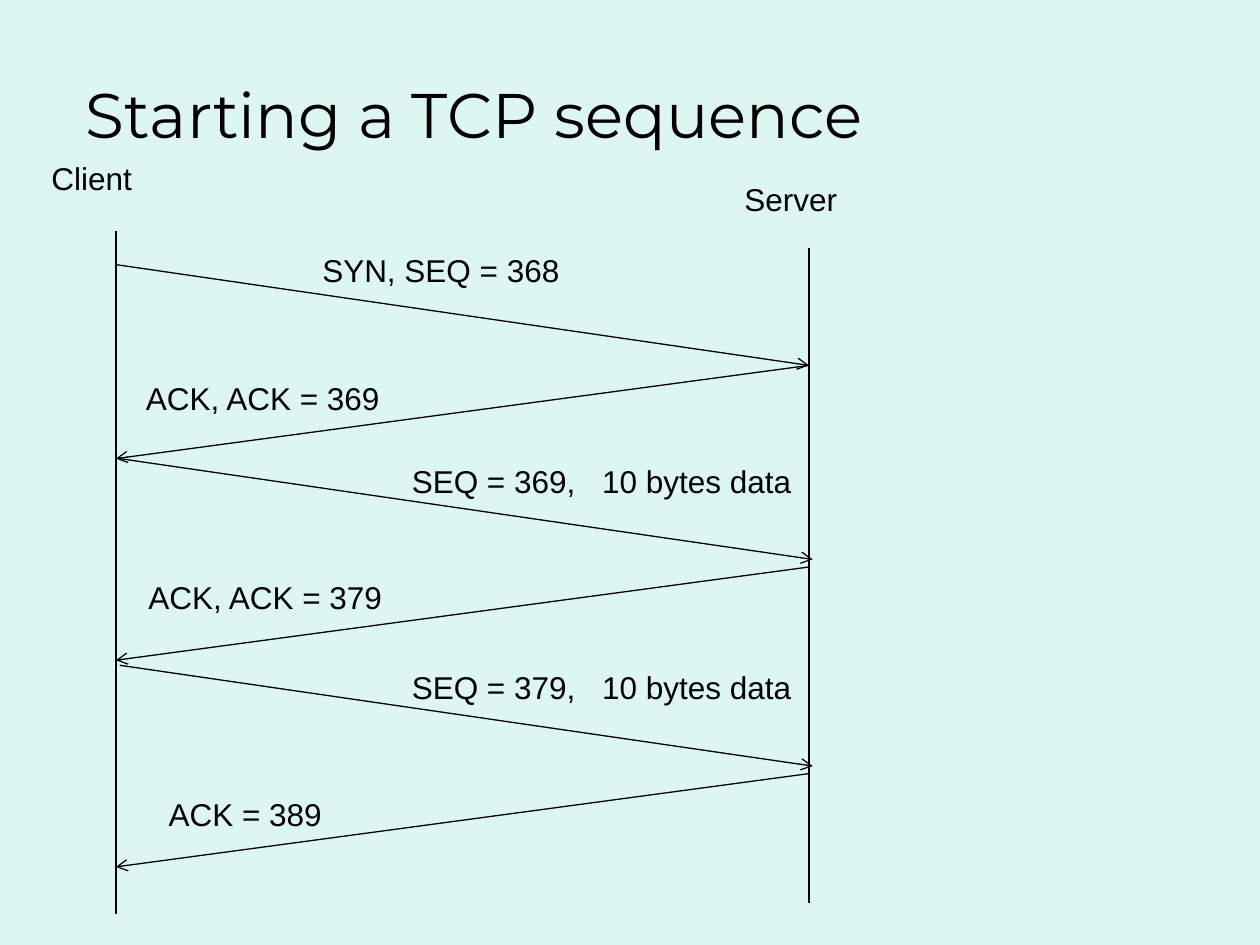
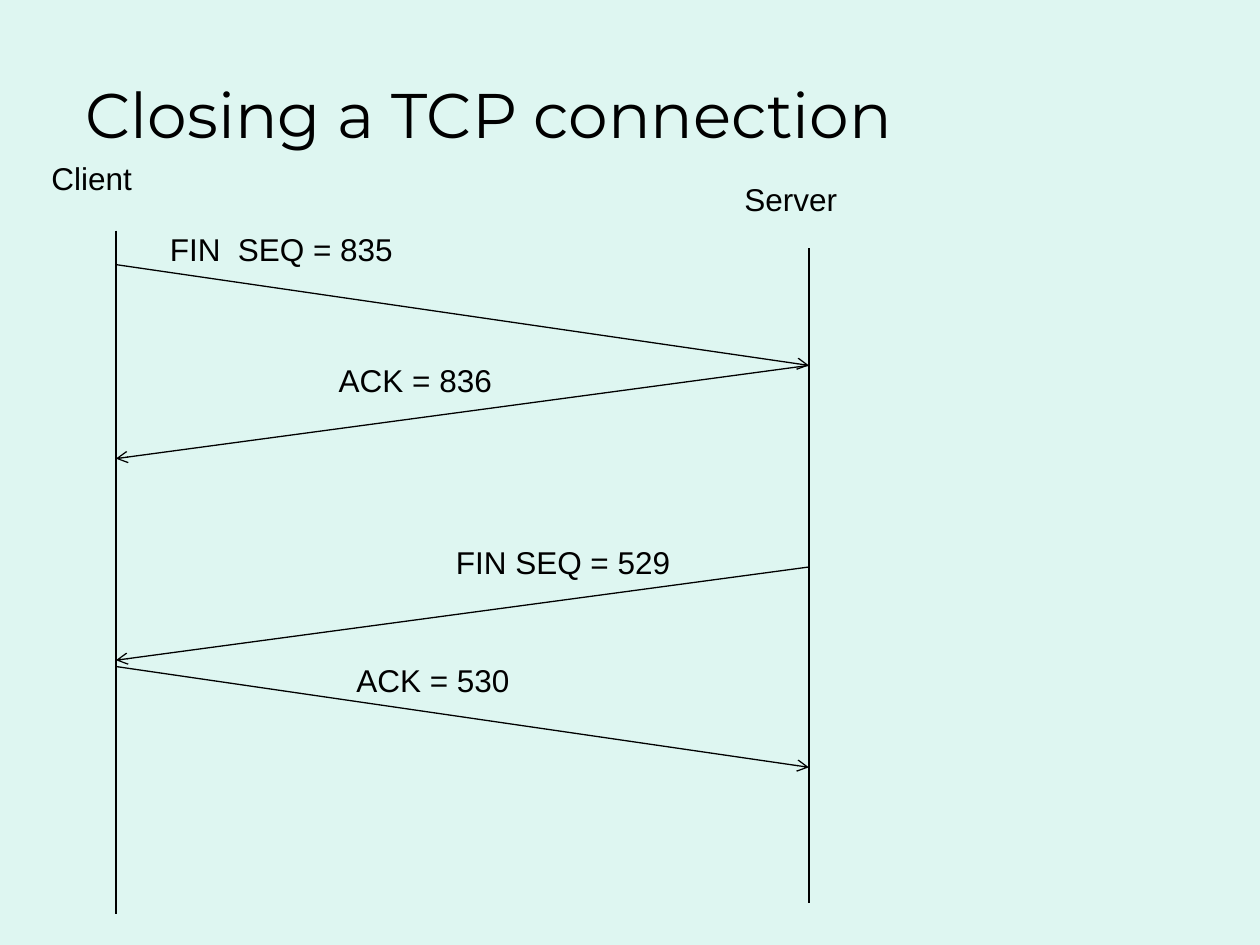
import pptx
import pptx.dml.color
import pptx.enum.shapes
import pptx.enum.text
import pptx.oxml
import pptx.oxml.ns
import pptx.util

Inches = pptx.util.Inches
INK, MINT = "000000", "DEF6F1"
BOX = (0.92, 1.83, 5.5, 5.42)
TITLE = {"left": 0.58, "top": 0.58, "width": 8.33, "height": 0.75}
LABEL = {"name": "Arial", "size": pptx.util.Pt(18)}
HEAD = {"name": "Montserrat", "size": pptx.util.Pt(36), "bold": False}
DROP = {"right": 0.8, "left": 0.74}

# Each message: text, direction, start y, label x, label y, shift, tab stop
START = [
    ("SYN, SEQ = 368", "right", 0.27, 1.54, 0.11, 0, None),
    ("ACK, ACK = 369", "left", 1.07, 0.14, 1.13, 0, None),
    ("SEQ = 369,\t10 bytes data", "right", 1.81, 2.25, 1.79, 0.03, 1.51),
    ("ACK, ACK = 379", "left", 2.67, 0.16, 2.71, 0, None),
    ("SEQ = 379,\t10 bytes data", "right", 3.45, 2.25, 3.42, 0.03, 1.51),
    ("ACK = 389", "left", 4.31, 0.32, 4.43, 0, None),
]
CLOSE = [
    ("FIN\tSEQ = 835", "right", 0.27, 0.33, -0.05, 0, 0.54),
    ("ACK = 836", "left", 1.07, 1.67, 0.99, 0, None),
    ("FIN SEQ = 529", "left", 2.67, 2.6, 2.43, 0, None),
    ("ACK = 530", "right", 3.46, 1.81, 3.37, 0, None),
]


def paint(color, code):
    """Set a colour from a hex string."""
    color.rgb = pptx.dml.color.RGBColor.from_string(code)


def style(font, look):
    """Apply font values and the ink colour."""
    for key, value in look.items():
        setattr(font, key, value)
    paint(font.color, INK)


def child(parent, tag, **values):
    """Append a drawing element with attributes."""
    node = pptx.oxml.parse_xml(f"<{tag} {pptx.oxml.ns.nsdecls('a')}/>")
    for key, value in values.items():
        node.set(key, str(value))
    parent.append(node)
    return node


def label(shapes, text, x, y, width=3.5, tab=None):
    """Add a text label, with an optional tab stop."""
    box = shapes.add_textbox(*map(Inches, (x, y, width, 0.4)))
    frame = box.text_frame
    frame.word_wrap = True
    frame.auto_size = pptx.enum.text.MSO_AUTO_SIZE.SHAPE_TO_FIT_TEXT
    para = frame.paragraphs[0]
    para.text = text
    if tab:
        stops = child(para._p.get_or_add_pPr(), "a:tabLst")
        child(stops, "a:tab", pos=Inches(tab), algn="l")
    style(para.runs[0].font, LABEL)


def draw(shapes, x1, y1, x2, y2, arrow=False):
    """Add a thin line, with an optional arrowhead."""
    kind = pptx.enum.shapes.MSO_CONNECTOR.STRAIGHT
    line = shapes.add_connector(kind, *map(Inches, (x1, y1, x2, y2)))
    line.line.width = pptx.util.Pt(0.75)
    paint(line.line.color, INK)
    if arrow:
        child(line.line._ln, "a:tailEnd", type="arrow")
    child(line._element.spPr, "a:effectLst")


def heading(slide, text):
    """Place and format the slide title."""
    title = slide.shapes.title
    for key, value in TITLE.items():
        setattr(title, key, Inches(value))
    frame = title.text_frame
    frame.text = text
    frame.vertical_anchor = pptx.enum.text.MSO_ANCHOR.MIDDLE
    para = frame.paragraphs[0]
    para.alignment = pptx.enum.text.PP_ALIGN.LEFT
    para.line_spacing = 0.8
    style(para.runs[0].font, HEAD)


def hosts(shapes, box):
    """Name the two hosts above their time lines."""
    x, y, width, _ = box
    label(shapes, "Client", x - 0.61, y - 0.62, 1.21)
    label(shapes, "Server", x + width - 0.61, y - 0.45, 1.21)


def trace(shapes, box, messages):
    """Draw both time lines and the messages between them."""
    x, y, width, height = box
    end = x + width
    draw(shapes, x, y, x, y + height)
    draw(shapes, end, y + 0.14, end, y + height - 0.08)
    for text, way, start, left, top, shift, tab in messages:
        ends = (x, end) if way == "right" else (end, x)
        y1 = y + start
        draw(shapes, ends[0] + shift, y1,
             ends[1] + shift, y1 + DROP[way], True)
        label(shapes, text, x + left, y + top, tab=tab)


def exchange(deck, title, messages):
    """Add one slide showing a message exchange."""
    slide = deck.slides.add_slide(deck.slide_layouts[5])
    heading(slide, title)
    hosts(slide.shapes, BOX)
    trace(slide.shapes.add_group_shape().shapes, BOX, messages)


def main():
    """Build and save the deck."""
    deck = pptx.Presentation()
    deck.slide_width, deck.slide_height = Inches(10), Inches(7.5)
    fill = deck.slide_master.background.fill
    fill.solid()
    paint(fill.fore_color, MINT)
    exchange(deck, "Starting a TCP sequence", START)
    exchange(deck, "Closing a TCP connection", CLOSE)
    deck.save("out.pptx")


if __name__ == "__main__":
    main()
